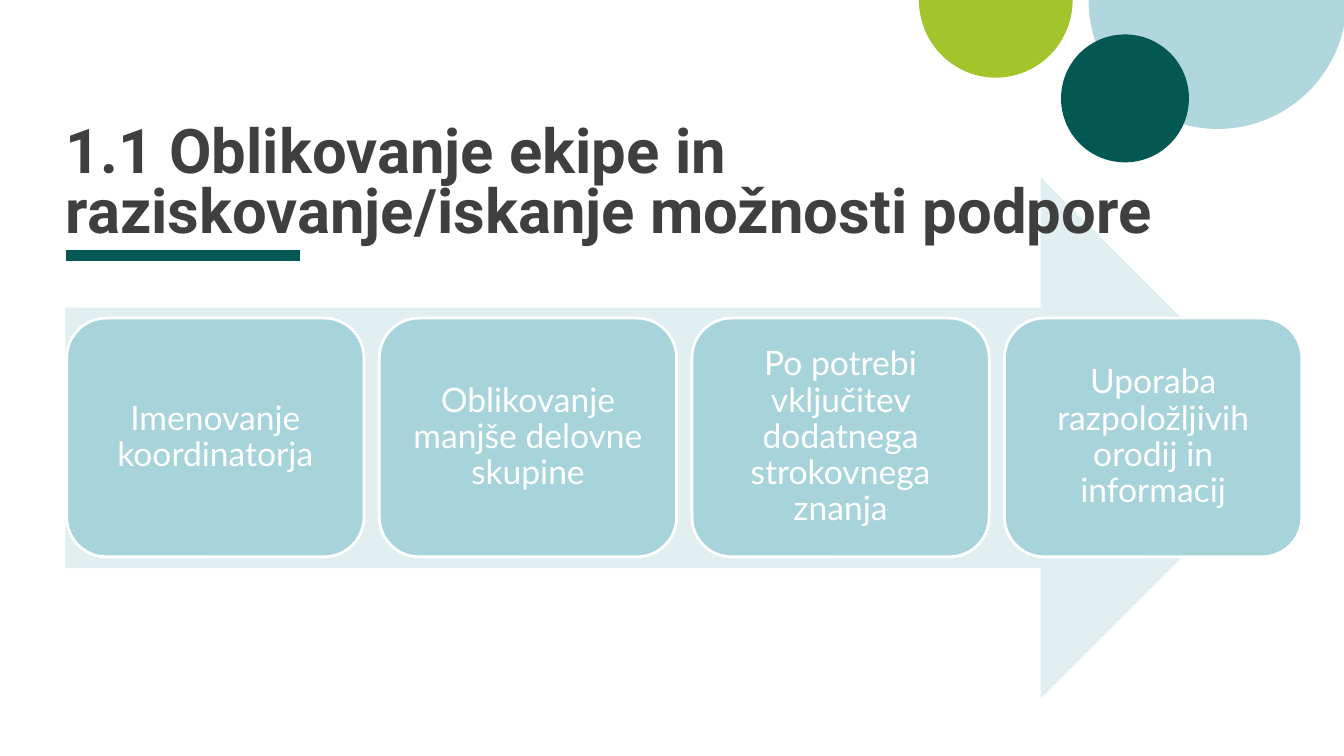
from dataclasses import dataclass

import pptx
import pptx.dml.color
import pptx.enum.shapes
import pptx.enum.text
import pptx.util
from lxml import etree

Pt = pptx.util.Pt
RGB = pptx.dml.color.RGBColor.from_string
SHAPE = pptx.enum.shapes.MSO_SHAPE
ANCHOR = pptx.enum.text.MSO_ANCHOR
ALIGN = pptx.enum.text.PP_ALIGN


@dataclass(frozen=True)
class Theme:
    white: str = "FFFFFF"
    ink: str = "3F3F3F"
    green: str = "035854"
    lime: str = "A3C42A"
    sky: str = "AFD7DD"
    card: str = "A7D3DA"
    arrow: str = "E1EFF1"
    title_font: str = "Roboto"
    body_font: str = "Lato"
    title_size: int = 44
    body_size: int = 24


theme = Theme()
LEFT = 46.8

deck = pptx.Presentation()
deck.slide_width, deck.slide_height = Pt(960), Pt(540)
page = deck.slides.add_slide(deck.slide_layouts[5])


def add_filled(kind, left, top, width, height, color):
    shape = page.shapes.add_shape(kind, Pt(left), Pt(top), Pt(width), Pt(height))
    shape.shadow.inherit = False
    shape.fill.solid()
    shape.fill.fore_color.rgb = RGB(color)
    shape.line.fill.background()
    return shape


def style_text(para, font, size, color, spacing):
    para.line_spacing = spacing
    para.font.name = font
    para.font.size = Pt(size)
    para.font.color.rgb = RGB(color)


# Corner circles: two lower halves and one whole
for left, top, width, height, color in [
    (777.6, -92.2, 184.3, 184.3, theme.sky),
    (656.4, -55.4, 109.8, 110.9, theme.lime),
]:
    half = add_filled(SHAPE.PIE, left, top, width, height, color)
    half.adjustments[0] = 0
    half.adjustments[1] = 108  # 180 degrees, in units of 100000/60000 degree
add_filled(SHAPE.OVAL, 757.9, 24.6, 91.4, 91.4, theme.green)

# Rule under the title
rule = page.shapes.add_connector(
    pptx.enum.shapes.MSO_CONNECTOR.STRAIGHT, Pt(LEFT), Pt(182.4), Pt(214.4), Pt(182.4)
)
rule.line.color.rgb = RGB(theme.green)
rule.line.width = Pt(8)
etree.SubElement(rule.element.spPr, pptx.oxml.ns.qn("a:effectLst"))

arrow = add_filled(SHAPE.RIGHT_ARROW, LEFT, 126.7, 882.7, 372.2, theme.arrow)

# Title, in front of the arrow
title = page.shapes.title
arrow.element.addnext(title.element)
title.left, title.top, title.width, title.height = Pt(LEFT), Pt(132.5), Pt(870.5), Pt(42.5)
frame = title.text_frame
frame.text = "1.1 Oblikovanje ekipe in raziskovanje/iskanje možnosti podpore"
frame.word_wrap = True
frame.auto_size = pptx.enum.text.MSO_AUTO_SIZE.NONE
frame.vertical_anchor = ANCHOR.BOTTOM
frame.margin_left = frame.margin_right = frame.margin_top = frame.margin_bottom = 0
para = frame.paragraphs[0]
para.alignment = ALIGN.LEFT
style_text(para, theme.title_font, theme.title_size, theme.ink, 0.8)
para.font.bold = True

# Step cards
steps = [
    "Imenovanje koordinatorja",
    "Oblikovanje manjše delovne skupine",
    "Po potrebi vključitev dodatnega strokovnega znanja",
    "Uporaba razpoložljivih orodij in informacij",
]
CARD_STEP = 223.3
for index, step in enumerate(steps):
    card = add_filled(
        SHAPE.ROUNDED_RECTANGLE, 47.6 + index * CARD_STEP, 227.2, 212.4, 170.6, theme.card
    )
    card.line.color.rgb = RGB(theme.white)
    card.line.width = Pt(2)
    frame = card.text_frame
    frame.text = step
    frame.word_wrap = True
    frame.vertical_anchor = ANCHOR.MIDDLE
    frame.margin_left = frame.margin_right = Pt(8.6)
    frame.margin_top = frame.margin_bottom = Pt(8.6)
    para = frame.paragraphs[0]
    para.alignment = ALIGN.CENTER
    style_text(para, theme.body_font, theme.body_size, theme.white, 0.9)

deck.save("out.pptx")
